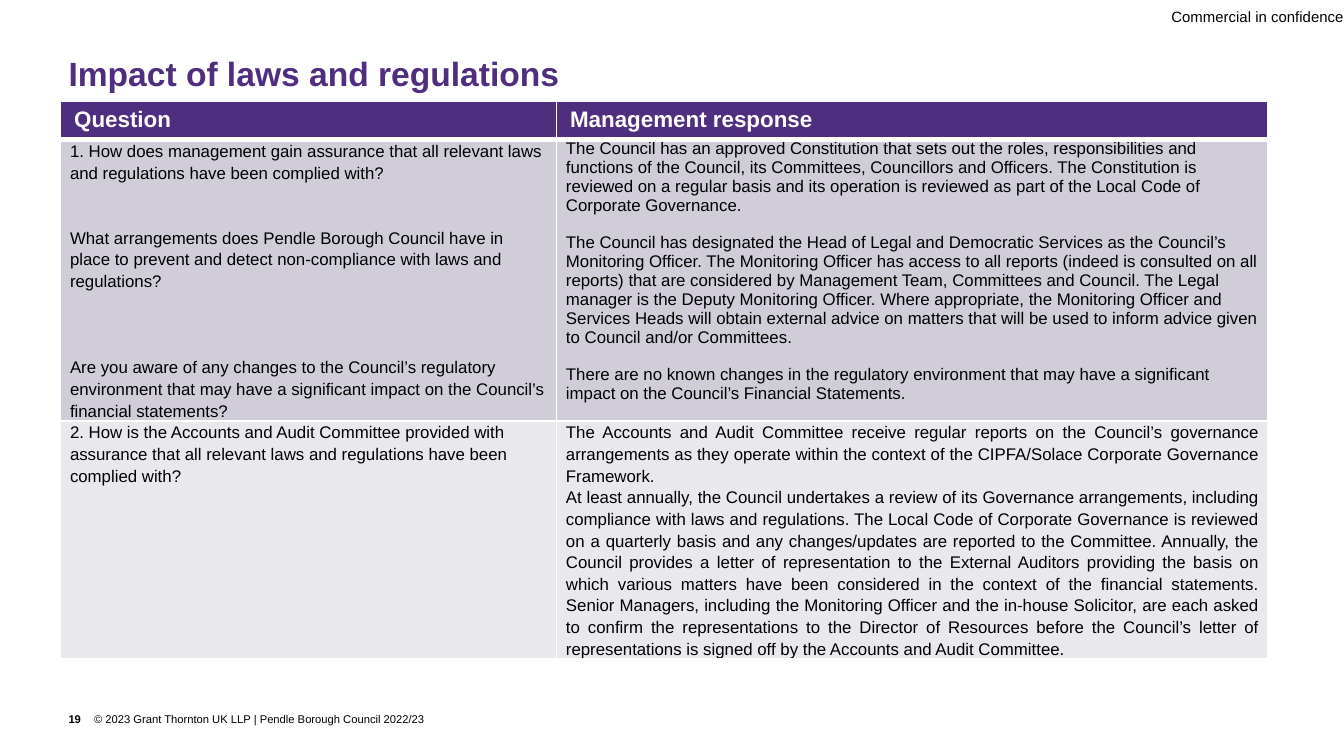
from pptx import Presentation
from pptx.dml.color import RGBColor
from pptx.enum import text
from pptx.oxml import parse_xml
from pptx.oxml.ns import nsdecls
from pptx.util import Pt

COLORS = {"purple": "4F2D7F", "white": "FFFFFF", "black": "000000",
          "band_dark": "D0CDD8", "band_light": "E9E8EC"}
ALIGN = text.PP_ALIGN


def write(frame, paragraphs, size=9, color="black", bold=False, align=ALIGN.LEFT,
          spacing=1.0, gaps=(), margins=(0, 0, 0, 0), anchor=text.MSO_ANCHOR.TOP):
    """Fill a text frame; gaps holds the space before each paragraph after the first."""
    frame.word_wrap = True
    frame.auto_size = text.MSO_AUTO_SIZE.NONE
    frame.vertical_anchor = anchor
    frame.margin_left, frame.margin_top, frame.margin_right, frame.margin_bottom = map(Pt, margins)
    for index, content in enumerate(paragraphs):
        paragraph = frame.paragraphs[0] if index == 0 else frame.add_paragraph()
        paragraph.alignment = align
        paragraph.line_spacing = spacing
        paragraph.space_before = Pt(gaps[index - 1] if index and gaps else 0)
        run = paragraph.add_run()
        run.text = content
        run.font.name = "Arial"
        run.font.size = Pt(size)
        run.font.bold = bold
        run.font.color.rgb = RGBColor.from_string(COLORS[color])


def style_cell(cell, fill, bottom_width):
    """Set the fill and white borders of a table cell."""
    properties = cell._tc.get_or_add_tcPr()
    for side, width in (("L", 1), ("R", 1), ("T", 1), ("B", bottom_width)):
        properties.append(parse_xml(
            f'<a:ln{side} {nsdecls("a")} w="{Pt(width)}"><a:solidFill>'
            f'<a:srgbClr val="{COLORS["white"]}"/></a:solidFill></a:ln{side}>'))
    cell.fill.solid()
    cell.fill.fore_color.rgb = RGBColor.from_string(COLORS[fill])


presentation = Presentation()
presentation.slide_width, presentation.slide_height = Pt(720), Pt(405)
slide = presentation.slides.add_slide(presentation.slide_layouts[5])

title = slide.shapes.title
title.left, title.top, title.width, title.height = Pt(36.7), Pt(31), Pt(646.5), Pt(62.6)
write(title.text_frame, ["Impact of laws and regulations"], size=18, color="purple",
      bold=True, spacing=0.9)

labels = [
    ("© 2023 Grant Thornton UK LLP | Pendle Borough Council 2022/23", (50.4, 381.6, 310, 7.2),
     {"size": 6}),
    ("Commercial in confidence", (607.7, 0, 112.3, 17.3),
     {"size": 8, "align": ALIGN.RIGHT, "anchor": text.MSO_ANCHOR.MIDDLE}),
    ("19", (36.7, 381.6, 13, 7.2), {"size": 6, "bold": True}),
]
for content, box, style in labels:
    label = slide.shapes.add_textbox(*map(Pt, box))
    write(label.text_frame, [content], **style)

header = {"size": 12, "color": "white", "bold": True, "margins": (7.2, 3.6, 7.2, 3.6)}
body = {"margins": (5, 0, 5, 0)}
question = {**body, "spacing": 1.15}
rows = [
    (20.7, "purple", [
        (["Question"], header),
        (["Management response"], header),
    ]),
    (150.5, "band_dark", [
        (["1. How does management gain assurance that all relevant laws and regulations have "
          "been complied with?",
          "What arrangements does Pendle Borough Council have in place to prevent and detect "
          "non-compliance with laws and regulations?",
          "Are you aware of any changes to the Council’s regulatory environment that may have "
          "a significant impact on the Council’s financial statements?"],
         {**question, "gaps": (23.2, 34.8)}),
        (["The Council has an approved Constitution that sets out the roles, responsibilities "
          "and functions of the Council, its Committees, Councillors and Officers. The "
          "Constitution is reviewed on a regular basis and its operation is reviewed as part "
          "of the Local Code of Corporate Governance.",
          "The Council has designated the Head of Legal and Democratic Services as the "
          "Council’s Monitoring Officer. The Monitoring Officer has access to all reports "
          "(indeed is consulted on all reports) that are considered by Management Team, "
          "Committees and Council. The Legal manager is the Deputy Monitoring Officer. Where "
          "appropriate, the Monitoring Officer and Services Heads will obtain external advice "
          "on matters that will be used to inform advice given to Council and/or Committees.",
          "There are no known changes in the regulatory environment that may have a "
          "significant impact on the Council’s Financial Statements."],
         {**body, "gaps": (10.1, 10.1)}),
    ]),
    (127.5, "band_light", [
        (["2. How is the Accounts and Audit Committee provided with assurance that all "
          "relevant laws and regulations have been complied with?"], question),
        (["The Accounts and Audit Committee receive regular reports on the Council’s "
          "governance arrangements as they operate within the context of the CIPFA/Solace "
          "Corporate Governance Framework.",
          "At least annually, the Council undertakes a review of its Governance arrangements, "
          "including compliance with laws and regulations. The Local Code of Corporate "
          "Governance is reviewed on a quarterly basis and any changes/updates are reported "
          "to the Committee. Annually, the Council provides a letter of representation to the "
          "External Auditors providing the basis on which various matters have been considered "
          "in the context of the financial statements. Senior Managers, including the "
          "Monitoring Officer and the in-house Solicitor, are each asked to confirm the "
          "representations to the Director of Resources before the Council’s letter of "
          "representations is signed off by the Accounts and Audit Committee."],
         {**question, "align": ALIGN.JUSTIFY}),
    ]),
]
column_widths = (265.7, 380.9)
table_height = sum(height for height, _, _ in rows)
table = slide.shapes.add_table(len(rows), len(column_widths), Pt(32.5), Pt(54),
                               Pt(sum(column_widths)), Pt(table_height)).table
for column, width in zip(table.columns, column_widths):
    column.width = Pt(width)
for row, (height, fill, cells) in zip(table.rows, rows):
    row.height = Pt(height)
    for cell, (paragraphs, style) in zip(row.cells, cells):
        write(cell.text_frame, paragraphs, **style)
        margins = map(Pt, style["margins"])
        cell.margin_left, cell.margin_top, cell.margin_right, cell.margin_bottom = margins
        style_cell(cell, fill, bottom_width=3 if fill == "purple" else 1)

presentation.save("out.pptx")
